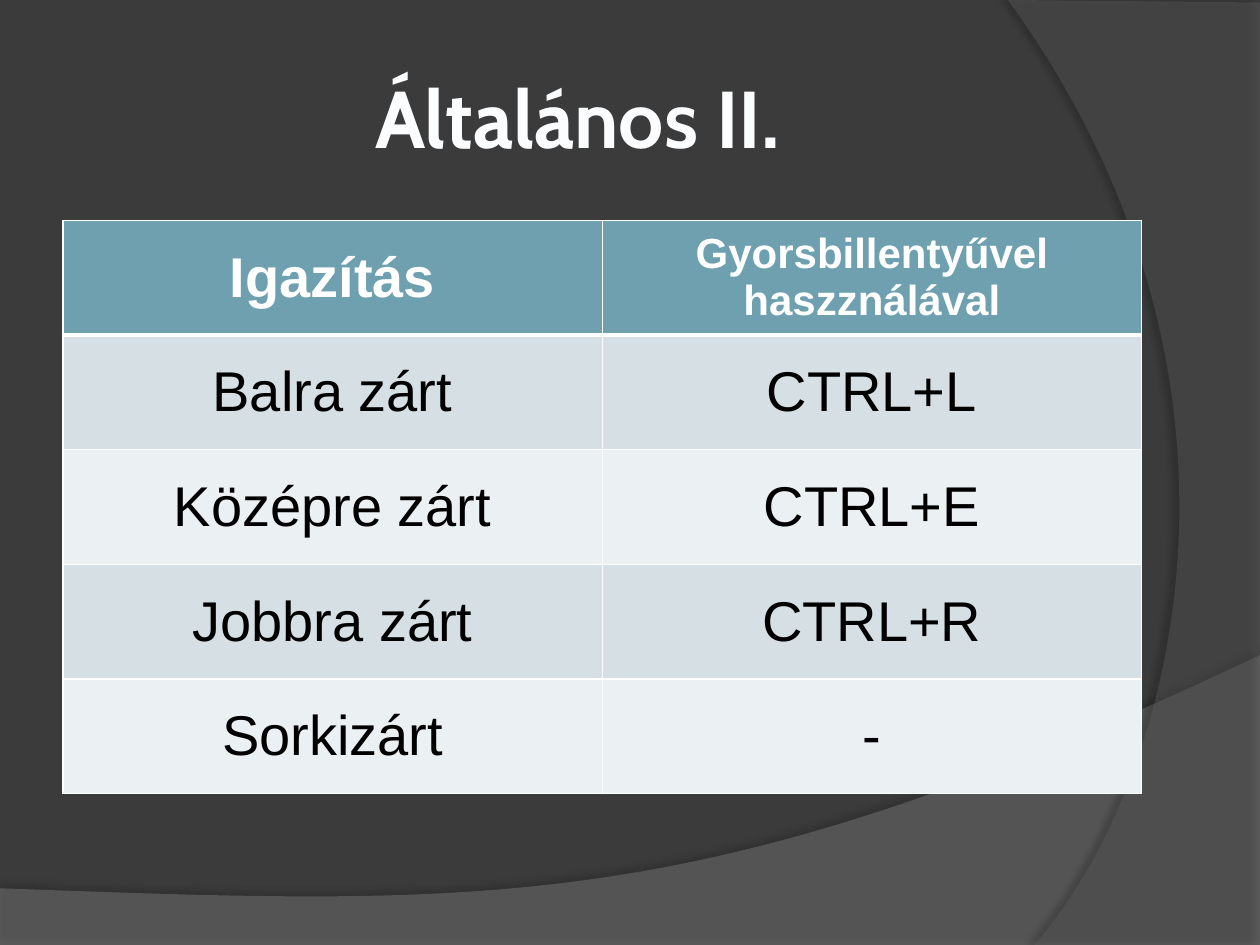
from dataclasses import dataclass

import pptx
import pptx.dml.color
import pptx.enum.text
import pptx.oxml
import pptx.oxml.ns
import pptx.util

NS = pptx.oxml.ns.nsdecls("a")
WIDTH, HEIGHT = pptx.util.Inches(10), pptx.util.Inches(7.5)


@dataclass(frozen=True)
class Theme:
    """Colours, fonts and type sizes of the slide."""
    background: str = "3B3B3B"
    wave: str = "7F7F7F"
    arc: str = "5E5E5E"
    title: str = "FCFDFE"
    title_outline: str = "50AFCE"
    header: str = "6EA0B0"
    bands: tuple = ("D5DFE4", "EBF0F2")
    light: str = "FFFFFF"
    dark: str = "000000"
    title_font: str = "Cabin"
    body_font: str = "Arial"
    title_size: int = 46
    body_size: int = 32
    small_size: int = 24


THEME = Theme()
ROWS = [
    ("Igazítás", "Gyorsbillentyűvel haszználával"),
    ("Balra zárt", "CTRL+L"),
    ("Középre zárt", "CTRL+E"),
    ("Jobbra zárt", "CTRL+R"),
    ("Sorkizárt", "-"),
]


def across(percent):
    """Return a share of the slide's width."""
    return round(WIDTH * percent / 100)


def down(percent):
    """Return a share of the slide's height."""
    return round(HEIGHT * percent / 100)


def set_fill(fill, color):
    """Make a fill solid in one colour."""
    fill.solid()
    fill.fore_color.rgb = pptx.dml.color.RGBColor.from_string(color)


def color_xml(color, opacity=100):
    """Return a solid fill as XML text."""
    return (f'<a:solidFill {NS}><a:srgbClr val="{color}">'
            f'<a:alpha val="{opacity * 1000}"/></a:srgbClr></a:solidFill>')


def curve(start, first, second, end, steps=60):
    """Return points along a cubic Bezier curve, without its start."""
    points = []
    for step in range(1, steps + 1):
        t = step / steps
        u = 1 - t
        weights = (u ** 3, 3 * u * u * t, 3 * u * t * t, t ** 3)
        points.append(tuple(
            sum(w * p[axis] for w, p in zip(weights, (start, first, second, end)))
            for axis in (0, 1)))
    return points


def add_backdrop(slide, points, color, opacity, shadow_opacity, distance, angle):
    """Add a translucent outline, given in percent of the slide, with a shadow."""
    corners = [(across(x), down(y)) for x, y in points]
    builder = slide.shapes.build_freeform(*corners[0])
    builder.add_line_segments(corners[1:], close=True)
    backdrop = builder.convert_to_shape()
    set_fill(backdrop.fill, color)
    backdrop.line.fill.background()
    tint = backdrop.fill._xPr.find(".//" + pptx.oxml.ns.qn("a:srgbClr"))
    tint.append(pptx.oxml.parse_xml(f'<a:alpha {NS} val="{opacity * 1000}"/>'))
    backdrop._element.spPr.append(pptx.oxml.parse_xml(
        f'<a:effectLst {NS}><a:outerShdw blurRad="{pptx.util.Pt(4)}" '
        f'dist="{pptx.util.Pt(distance)}" dir="{angle * 60000}" algn="ctr" rotWithShape="0">'
        f'<a:srgbClr val="{THEME.dark}"><a:alpha val="{shadow_opacity * 1000}"/></a:srgbClr>'
        f'</a:outerShdw></a:effectLst>'))


def write(frame, text, font, size, color, bold):
    """Write one centred run into a text frame."""
    paragraph = frame.paragraphs[0]
    paragraph.alignment = pptx.enum.text.PP_ALIGN.CENTER
    run = paragraph.add_run()
    run.text = text
    run.font.name = font
    run.font.size = pptx.util.Pt(size)
    run.font.bold = bold
    set_fill(run.font.fill, color)
    return run


def set_title(slide, text):
    """Place and format the title placeholder."""
    title = slide.shapes.title
    title.left, title.top = across(5), down(4)
    title.width, title.height = across(81.7), down(16.67)
    frame = title.text_frame
    frame.word_wrap = True
    frame.vertical_anchor = pptx.enum.text.MSO_ANCHOR.MIDDLE
    margin = pptx.util.Inches(0.05)
    frame.margin_left = frame.margin_right = margin
    frame.margin_top = frame.margin_bottom = margin
    run = write(frame, text, THEME.title_font, THEME.title_size, THEME.title, True)
    run.font._element.insert(0, pptx.oxml.parse_xml(
        f'<a:ln {NS} w="{pptx.util.Pt(0.07)}">{color_xml(THEME.title_outline, 55)}</a:ln>'))
    slide.shapes._spTree.append(title._element)


def set_borders(cell, widths):
    """Draw the left, right, top and bottom borders of a cell."""
    properties = cell._tc.get_or_add_tcPr()
    for side, width in zip("LRTB", widths):
        properties.append(pptx.oxml.parse_xml(
            f'<a:ln{side} {NS} w="{pptx.util.Pt(width)}">{color_xml(THEME.light)}</a:ln{side}>'))


def add_shortcut_table(slide, rows):
    """Add the table of alignments and their shortcuts."""
    table = slide.shapes.add_table(len(rows), len(rows[0]), across(5), down(23.33),
                                   across(85.6), down(60.67)).table
    for r, row in enumerate(rows):
        heading = r == 0
        for c, text in enumerate(row):
            cell = table.cell(r, c)
            cell.vertical_anchor = pptx.enum.text.MSO_ANCHOR.MIDDLE
            set_borders(cell, (1, 1, 3 if r == 1 else 1, 3 if heading else 1))
            set_fill(cell.fill, THEME.header if heading else THEME.bands[(r - 1) % 2])
            write(cell.text_frame, text, THEME.body_font,
                  THEME.small_size if heading and c else THEME.body_size,
                  THEME.light if heading else THEME.dark, heading)


def main():
    """Build and save the slide."""
    deck = pptx.Presentation()
    deck.slide_width, deck.slide_height = WIDTH, HEIGHT
    slide = deck.slides.add_slide(deck.slide_layouts[5])
    set_fill(slide.background.fill, THEME.background)
    wave = [(0, 94), (0, 100), (100, 100), (100, 69.33)]
    wave += curve(wave[-1], (55.9, 97.2), (39.1, 95.87), wave[0])
    add_backdrop(slide, wave, THEME.wave, 45, 35, 3.5, 270)
    arc = [(100, 0.27), (100, 100), (82.1, 100)]
    arc += curve(arc[-1], (93.5, 82.53), (101.8, 40), (80, 0))
    add_backdrop(slide, arc, THEME.arc, 40, 45, 4, 180)
    set_title(slide, "Általános II.")
    add_shortcut_table(slide, ROWS)
    deck.save("out.pptx")


if __name__ == "__main__":
    main()
